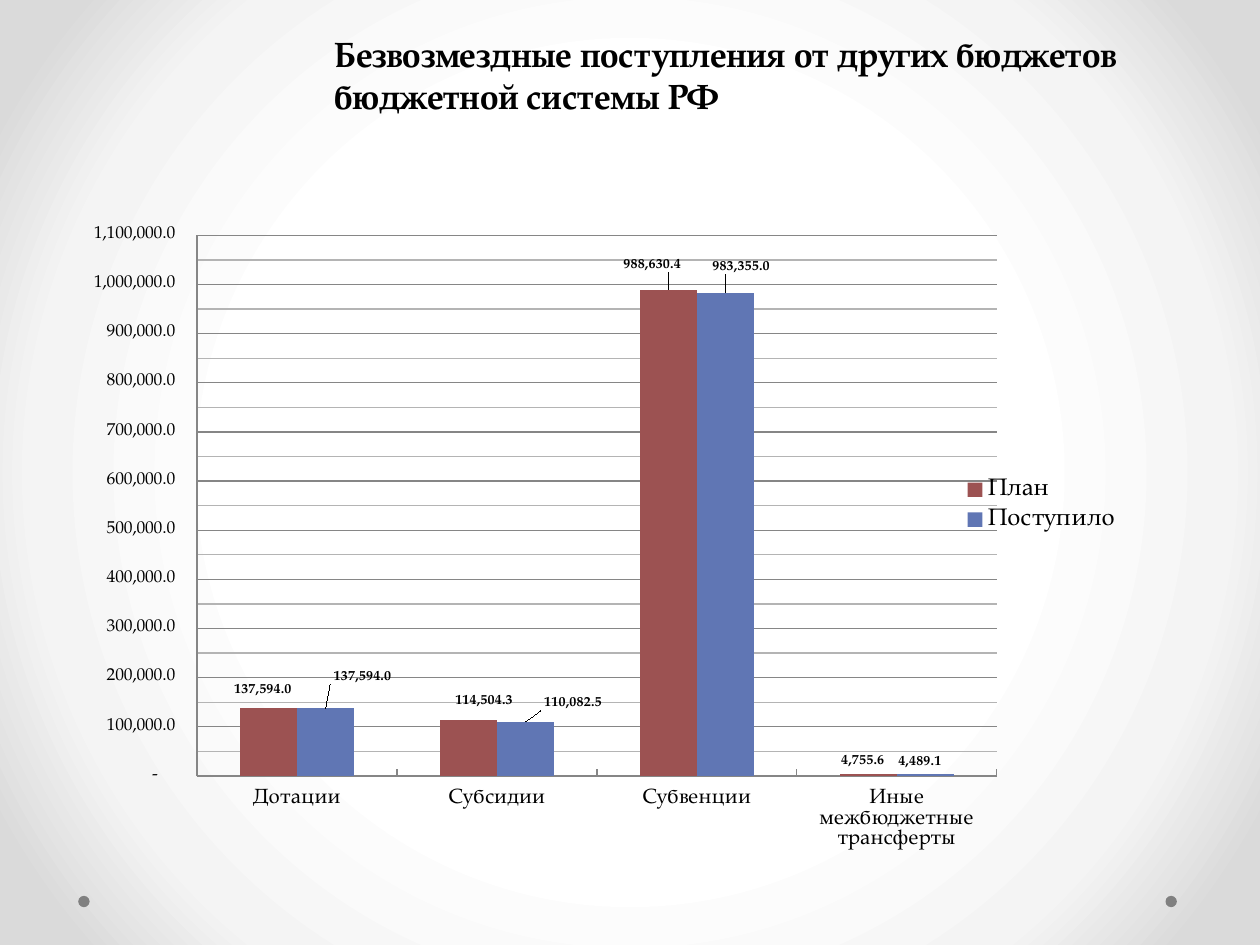
import copy
import lxml.etree
import pptx
import pptx.chart.data
import pptx.dml.color
import pptx.enum.chart
import pptx.enum.shapes
import pptx.enum.text
import pptx.oxml
import pptx.oxml.ns
import pptx.util

Pt = pptx.util.Pt
qn = pptx.oxml.ns.qn
FACE = "TeX Gyre Pagella"
NUMBER = '_-* #,##0.0_р_._-;\\-* #,##0.0_р_._-;_-* "-"??_р_._-;_-@_-'


def color(value):
    return pptx.dml.color.RGBColor.from_string(value)


def manual_layout(**values):
    layout = lxml.etree.Element(qn("c:layout"))
    manual = lxml.etree.SubElement(layout, qn("c:manualLayout"))
    for name, value in values.items():
        lxml.etree.SubElement(manual, qn("c:" + name), val=str(value))
    return layout


deck = pptx.Presentation()
deck.slide_width, deck.slide_height = Pt(720), Pt(540)
page = deck.slides.add_slide(deck.slide_layouts[6])

page.background.fill.gradient()
gradient = page.element.find(".//" + qn("a:gradFill"))
for child in list(gradient):
    gradient.remove(child)
stops = lxml.etree.SubElement(gradient, qn("a:gsLst"))
for position, shade in ((50, "FFFFFF"), (76, "F4F4F4"), (92, "DADADA")):
    stop = lxml.etree.SubElement(stops, qn("a:gs"), pos=str(position * 1000))
    lxml.etree.SubElement(stop, qn("a:srgbClr"), val=shade)
circle = lxml.etree.SubElement(gradient, qn("a:path"), path="circle")
lxml.etree.SubElement(circle, qn("a:fillToRect"), l="50000", t="50000", r="50000", b="50000")

for left in (666, 44.7):
    dot = page.shapes.add_shape(
        pptx.enum.shapes.MSO_SHAPE.OVAL, Pt(left), Pt(511.9), Pt(6.5), Pt(6.5)
    )
    dot.shadow.inherit = False
    dot.fill.solid()
    dot.fill.fore_color.rgb = color("808080")
    dot.line.fill.background()

data = pptx.chart.data.CategoryChartData(number_format="#,##0.0")
data.categories = ["Дотации", "Субсидии", "Субвенции", "Иные межбюджетные трансферты"]
data.add_series("План", [137594, 114504.3, 988630.4, 4755.6])
data.add_series("Поступило", [137594, 110082.5, 983355, 4489.1])
chart = page.shapes.add_chart(
    pptx.enum.chart.XL_CHART_TYPE.COLUMN_CLUSTERED,
    Pt(36.7), Pt(105.8), Pt(607), Pt(380.2), data,
).chart
chart.has_title = False
chart.font.name = FACE
chart.font.size = Pt(18)
chart.font.color.rgb = color("000000")

plot = chart.plots[0]
plot.gap_width = 150
plot.overlap = 0
plot.vary_by_categories = False
area = chart.element.find(".//" + qn("c:plotArea"))
for old in area.findall(qn("c:layout")):
    area.remove(old)
area.insert(0, manual_layout(
    layoutTarget="inner", xMode="edge", yMode="edge", x=0.125, y=0.077, w=0.753, h=0.829
))

marks = pptx.enum.chart.XL_TICK_MARK
value_axis, category_axis = chart.value_axis, chart.category_axis
value_format = {
    "minimum_scale": 0, "maximum_scale": 1100000, "major_unit": 100000, "minor_unit": 50000,
    "has_major_gridlines": True, "has_minor_gridlines": True, "major_tick_mark": marks.NONE,
}
category_format = {
    "major_tick_mark": marks.INSIDE,
    "tick_label_position": pptx.enum.chart.XL_TICK_LABEL_POSITION.LOW,
}
for axis, size, values in ((value_axis, 10, value_format), (category_axis, 12, category_format)):
    for name, value in values.items():
        setattr(axis, name, value)
    axis.tick_labels.font.size = Pt(size)
    axis.format.line.color.rgb = color("868686")
value_axis.tick_labels.number_format = NUMBER
value_axis.tick_labels.number_format_is_linked = False
value_axis.major_gridlines.format.line.color.rgb = color("868686")
minor = pptx.oxml.parse_xml(
    f'<c:minorGridlines {pptx.oxml.ns.nsdecls("c", "a")}><c:spPr><a:ln>'
    '<a:solidFill><a:srgbClr val="B4B4B4"/></a:solidFill></a:ln></c:spPr></c:minorGridlines>'
)
grid = chart.element.find(".//" + qn("c:minorGridlines"))
grid.getparent().replace(grid, minor)

chart.has_legend = True
legend = chart.legend
legend.position = pptx.enum.chart.XL_LEGEND_POSITION.RIGHT
legend.include_in_layout = False
legend.font.size = Pt(14)
legend_node = chart.element.find(".//" + qn("c:legend"))
for old in legend_node.findall(qn("c:layout")):
    legend_node.remove(old)
legend_node.insert(1, manual_layout(xMode="edge", yMode="edge", x=0.84, y=0.44, w=0.16, h=0.1))

outside = pptx.enum.chart.XL_LABEL_POSITION.OUTSIDE_END
label_offsets = (
    ((0, -0.01), (0.02, -0.01), (-0.01, -0.02)),
    ((0.04, -0.03), (0.05, -0.01), (0.02, -0.02)),
)
for series, fill, offsets in zip(plot.series, ("9C5252", "6076B4"), label_offsets):
    series.format.fill.solid()
    series.format.fill.fore_color.rgb = color(fill)
    labels = series.data_labels
    labels.show_value = True
    labels.number_format = NUMBER
    labels.number_format_is_linked = False
    point_labels = [series.points[index].data_label for index in range(len(offsets))]
    for label in [labels, *point_labels]:
        label.position = outside
        label.font.size = Pt(8)
        label.font.bold = True
    number_node = series.data_labels._element.find(qn("c:numFmt"))
    for node, (x, y) in zip(labels._element.findall(qn("c:dLbl")), offsets):
        node.insert(1, manual_layout(x=x, y=y))
        node.insert(2, copy.deepcopy(number_node))

title = page.shapes.add_textbox(Pt(184.3), Pt(15.1), Pt(481.7), Pt(79.9))
title.text_frame.word_wrap = True
span = title.text_frame.paragraphs[0].add_run()
span.text = "Безвозмездные поступления от других бюджетов бюджетной системы РФ"
for name, value in {"name": FACE, "size": Pt(20), "bold": True}.items():
    setattr(span.font, name, value)
span.font.color.rgb = color("000000")

deck.save("out.pptx")
